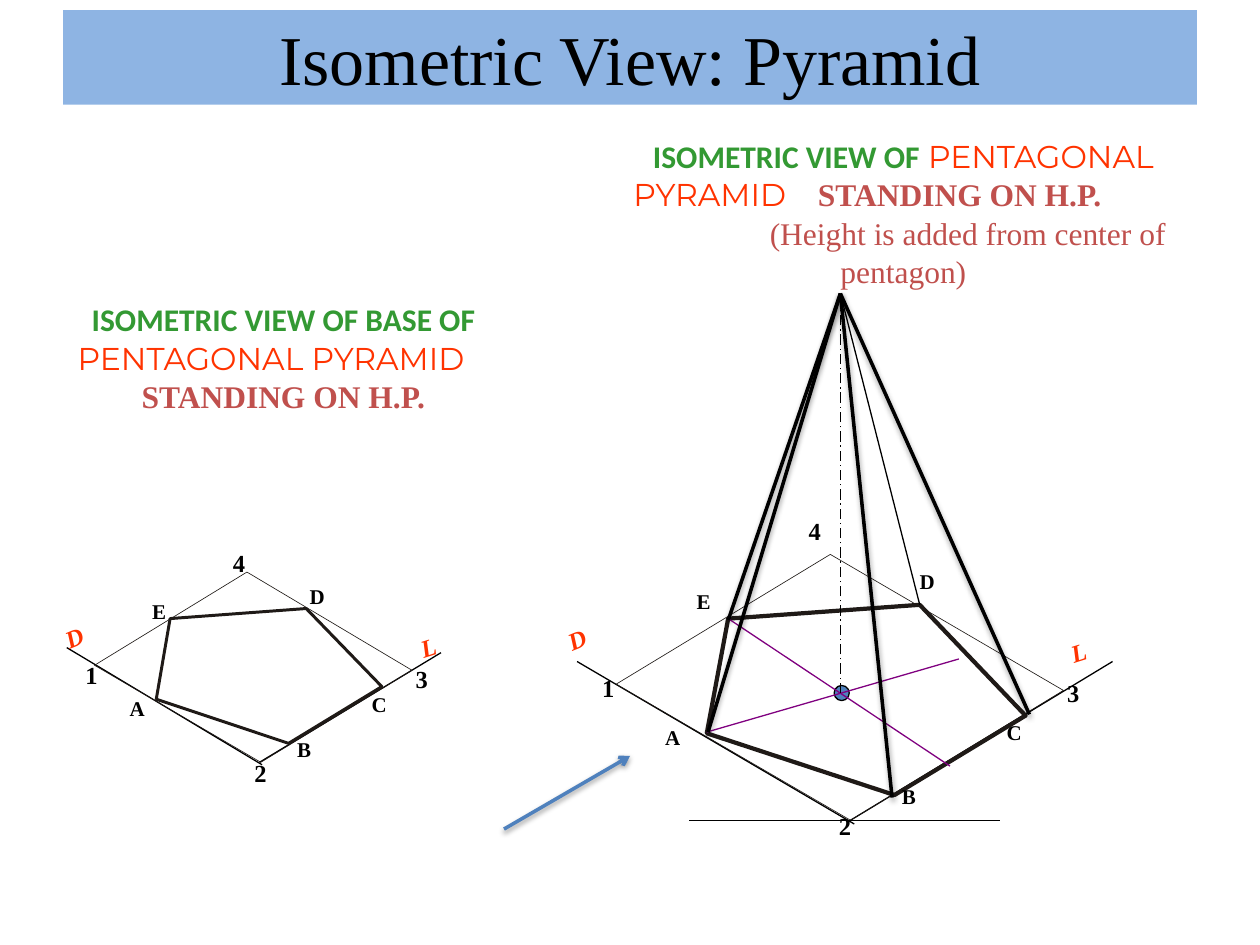
"""Build the slide on the isometric view of a pentagonal pyramid."""
from lxml import etree
from pptx import Presentation
from pptx import util as u
from pptx.dml.color import RGBColor
from pptx.enum import dml, shapes, text
from pptx.oxml import parse_xml
from pptx.oxml.ns import nsdecls, qn

SERIF = "Times New Roman"
BLACK, INK, RED, BLUE, PURPLE = "000000", "1F1A17", "FF3300", "4F81BD", "800080"
GREEN_RUN = {"name": "Calibri", "bold": True, "color": "339933"}
RED_RUN = {"name": "Montserrat", "bold": False, "color": RED}
ROSE_RUN = {"name": SERIF, "bold": True, "color": "C0504D"}
PLAIN_RUN = {**ROSE_RUN, "bold": False}

BASE = {
    "sides": [((2.08, 6.07), (0.53, 5.14)), ((2.06, 6.05), (3.5, 5.18))],
    "frame": [(0.75, 5.28), (1.96, 4.54), (3.27, 5.32), (2.07, 6.05)],
    "penta": [(1.24, 5.55), (2.29, 5.9), (3.03, 5.45), (2.43, 4.83), (1.35, 4.91)],
    "weight": 1.7,
    "axes": {"D": (0.42, 4.89, 337.4), "L": (3.24, 4.97, 342.6)},
    "digits": {"1": (0.58, 5.19), "2": (1.92, 5.97), "3": (3.2, 5.22), "4": (1.75, 4.3)},
    "names": {"A": (0.93, 5.47), "B": (2.26, 5.8), "C": (2.85, 5.44),
              "D": (2.36, 4.58), "E": (1.11, 4.7)},
}
SOLID = {
    "sides": [((6.78, 6.54), (4.58, 5.25)), ((6.75, 6.51), (8.83, 5.25))],
    "frame": [(4.89, 5.43), (6.59, 4.4), (8.44, 5.48), (6.75, 6.51)],
    "penta": [(5.61, 5.82), (7.1, 6.31), (8.14, 5.68), (7.3, 4.8), (5.78, 4.91)],
    "weight": 2.4,
    "axes": {"D": (4.41, 4.91, 337.4), "L": (8.4, 5.01, 342.6)},
    "digits": {"1": (4.68, 5.29), "2": (6.56, 6.39), "3": (8.37, 5.33), "4": (6.32, 4.05)},
    "names": {"A": (5.18, 5.7), "B": (7.06, 6.17), "C": (7.89, 5.66),
              "D": (7.2, 4.46), "E": (5.43, 4.62)},
}
APEX, HEART = (6.67, 2.33), (6.67, 5.5)


def cm(num):
    """Turn a length on the inch grid into centimetres."""
    return u.Cm(num * 2.54)


def rgb(code):
    """Return a colour from its hex string."""
    return RGBColor.from_string(code)


def put(item, vals):
    """Set each attribute of the dict on the item."""
    for key, val in vals.items():
        setattr(item, key, val)


def ink(shape, code, width):
    """Format the outline of a shape."""
    shape.line.color.rgb = rgb(code)
    shape.line.width = u.Pt(width)


def style(font, color, **vals):
    """Set the colour and other values of a font."""
    put(font, vals)
    font.color.rgb = rgb(color)


def line(tree, start, end, code=BLACK, width=0.75, dash=None, arrow=False, shade=False):
    """Draw a straight line with optional dash, arrowhead and shadow."""
    wire = tree.add_connector(shapes.MSO_CONNECTOR.STRAIGHT,
                              *(cm(num) for num in start + end))
    ink(wire, code, width)
    if dash:
        wire.line.dash_style = dash
    props = wire._element.spPr
    if arrow:
        etree.SubElement(props.find(qn("a:ln")), qn("a:tailEnd"), type="arrow")
    glow = ('<a:outerShdw blurRad="40000" dist="20000" dir="5400000" rotWithShape="0">'
            '<a:srgbClr val="000000"><a:alpha val="38000"/></a:srgbClr></a:outerShdw>')
    props.append(parse_xml(f'<a:effectLst {nsdecls("a")}>{glow if shade else ""}</a:effectLst>'))


def outline(tree, dots, width):
    """Draw a closed unfilled polygon."""
    first, *rest = [(cm(x), cm(y)) for x, y in dots]
    pen = tree.build_freeform(*first)
    pen.add_line_segments(rest, close=True)
    form = pen.convert_to_shape()
    form.shadow.inherit = False
    form.fill.background()
    ink(form, INK, width)


def label(tree, word, x, y, turn=0, size=14, color=BLACK, italic=False):
    """Add a one-letter label."""
    side = 0.33 if size == 14 else 0.3
    box = tree.add_textbox(cm(x), cm(y), cm(0.32), cm(side))
    box.rotation = turn
    put(box.text_frame, {"word_wrap": False, "auto_size": text.MSO_AUTO_SIZE.SHAPE_TO_FIT_TEXT})
    run = box.text_frame.paragraphs[0].add_run()
    run.text = word
    style(run.font, color, name=SERIF, size=u.Pt(size), bold=True, italic=italic)


def caption(tree, x, y, high, rows):
    """Add a centred caption from rows of left indent, right indent and runs."""
    box = tree.add_textbox(cm(x), cm(y), cm(4.5), cm(high))
    frame = box.text_frame
    put(frame, {"word_wrap": True, "auto_size": text.MSO_AUTO_SIZE.SHAPE_TO_FIT_TEXT})
    for num, (left, right, runs) in enumerate(rows):
        para = frame.add_paragraph() if num else frame.paragraphs[0]
        put(para, {"alignment": text.PP_ALIGN.CENTER, "line_spacing": u.Pt(22)})
        props = para._p.get_or_add_pPr()
        props.set("marL", str(u.Cm(left)))
        props.set("marR", str(u.Cm(right)))
        for word, vals in runs:
            run = para.add_run()
            run.text = word
            style(run.font, size=u.Pt(18), **vals)
            if word == " ":
                run._r.get_or_add_rPr().set("spc", "1350")


def figure(tree, data):
    """Draw a pentagon in its isometric frame with labels."""
    for start, end in data["sides"]:
        line(tree, start, end)
    outline(tree, data["frame"], 0.38)
    outline(tree, data["penta"], data["weight"])
    for word, spot in data["axes"].items():
        label(tree, word, *spot, color=RED, italic=True)
    for word, spot in data["digits"].items():
        label(tree, word, *spot)
    for word, spot in data["names"].items():
        label(tree, word, *spot, size=12)


def heading(slide):
    """Format the title as a blue band."""
    title = slide.shapes.title
    put(title, {"left": cm(0.5), "top": cm(0.08), "width": cm(9), "height": cm(0.75)})
    title.fill.solid()
    title.fill.fore_color.rgb = rgb("8EB4E3")
    title.text_frame.text = "Isometric View: Pyramid"
    title.text_frame.vertical_anchor = text.MSO_ANCHOR.MIDDLE
    para = title.text_frame.paragraphs[0]
    para.alignment = text.PP_ALIGN.CENTER
    style(para.runs[0].font, BLACK, name=SERIF, size=u.Pt(40))


def rise(tree):
    """Draw the centre, axis and slant edges of the pyramid."""
    line(tree, (5.47, 6.51), (7.94, 6.51))
    dot = tree.add_shape(shapes.MSO_SHAPE.OVAL, cm(HEART[0] - 0.05), cm(HEART[1] - 0.06),
                         cm(0.12), cm(0.12))
    dot.shadow.inherit = False
    dot.fill.solid()
    dot.fill.fore_color.rgb = rgb(BLUE)
    ink(dot, BLACK, 0.75)
    line(tree, (5.61, 5.81), (7.61, 5.23), PURPLE)
    line(tree, (5.78, 4.91), (7.54, 6.08), PURPLE)
    line(tree, HEART, APEX, dash=dml.MSO_LINE.LONG_DASH_DOT)
    for foot in [(5.78, 4.92), (5.62, 5.81), (7.08, 6.33), (8.17, 5.67)]:
        line(tree, foot, APEX, width=2, shade=True)
    line(tree, APEX, (7.3, 4.8))


def main():
    """Build and save the slide."""
    deck = Presentation()
    put(deck, {"slide_width": cm(10), "slide_height": cm(7.5)})
    slide = deck.slides.add_slide(deck.slide_layouts[5])
    tree = slide.shapes
    heading(slide)
    figure(tree, SOLID)
    rise(tree)
    figure(tree, BASE)
    caption(tree, 4.92, 1.03, 1.3, [
        (0, 0, [("ISOMETRIC VIEW OF", GREEN_RUN), (" PENTAGONAL", RED_RUN)]),
        (0, 1.45, [("PYRAMID", RED_RUN), (" ", RED_RUN), ("STANDING ON H.P.", ROSE_RUN)]),
        (2.6, 0, [("(Height is added from center of", PLAIN_RUN)]),
        (0, 0, [("pentagon)", PLAIN_RUN)])])
    caption(tree, 0, 2.33, 1, [
        (0, 0, [("ISOMETRIC VIEW OF BASE OF", GREEN_RUN)]),
        (0, 0.5, [("PENTAGONAL PYRAMID", RED_RUN)]),
        (0, 0, [("STANDING ON H.P.", ROSE_RUN)])])
    line(tree, (4, 6.58), (5, 6), BLUE, 2, arrow=True, shade=True)
    deck.save("out.pptx")


if __name__ == "__main__":
    main()
